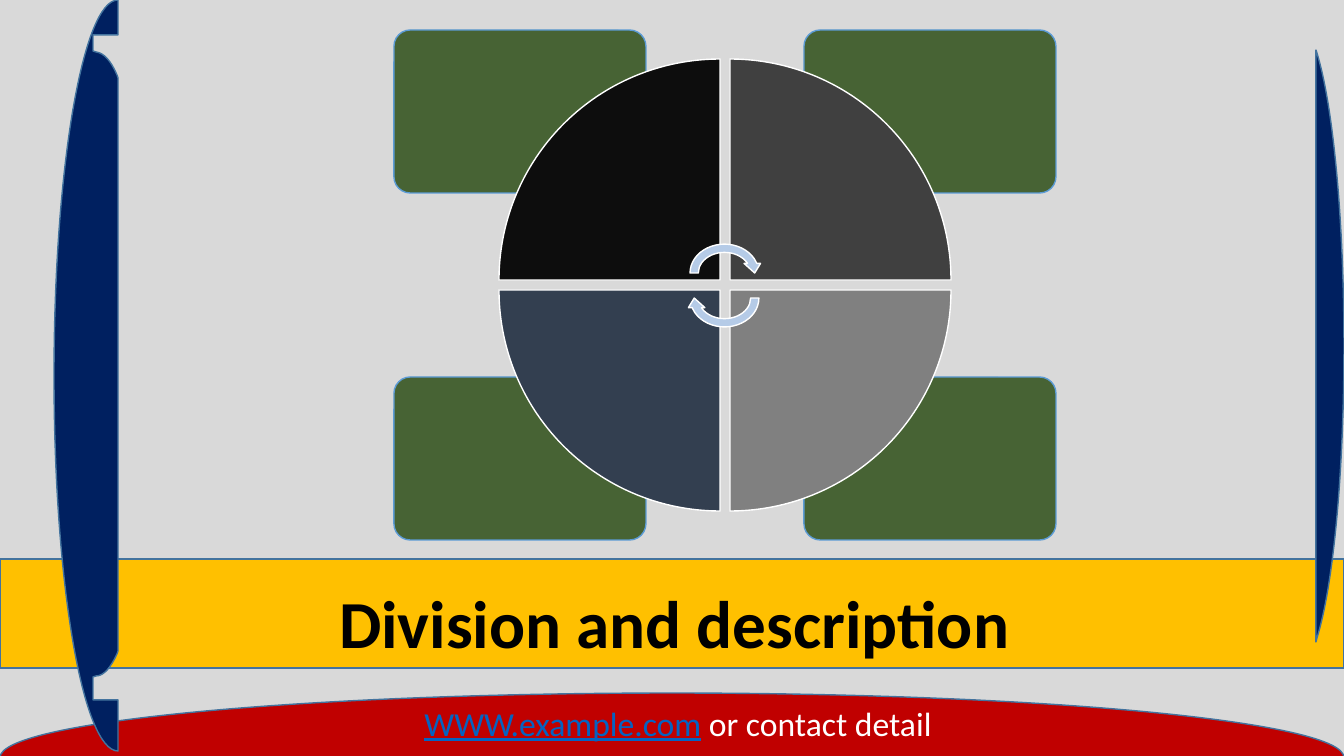
"""Build the division and description slide with a four-part cycle."""
from lxml.etree import SubElement
from pptx import Presentation
from pptx.dml.color import RGBColor
from pptx.enum.shapes import MSO_SHAPE as Preset
from pptx.enum.text import MSO_AUTO_SIZE as AutoSize, PP_ALIGN as Align
from pptx.oxml.ns import qn
from pptx.util import Pt

PX = 12192000 / 1344
GREY = RGBColor(0xD9, 0xD9, 0xD9)
GOLD = RGBColor(0xFF, 0xC0, 0x00)
RED = RGBColor(0xC0, 0x00, 0x00)
NAVY = RGBColor(0x00, 0x20, 0x60)
EDGE = RGBColor(0x43, 0x73, 0x9E)
GREEN = RGBColor(0x38, 0x57, 0x23)
SKY = RGBColor(0x5B, 0x9B, 0xD5)
WHITE = RGBColor(0xFF, 0xFF, 0xFF)
BLACK = RGBColor(0x00, 0x00, 0x00)
LINK = RGBColor(0x05, 0x63, 0xC1)
ARROW = RGBColor(0xB5, 0xCB, 0xE7)
NEAR_BLACK = RGBColor(0x0D, 0x0D, 0x0D)
CHARCOAL = RGBColor(0x40, 0x40, 0x40)
MID_GREY = RGBColor(0x80, 0x80, 0x80)
SLATE = RGBColor(0x33, 0x3F, 0x50)


def paint(shape, fill, line):
    """Give a shape a solid fill and a thin outline without a shadow."""
    shape.shadow.inherit = False
    shape.fill.solid()
    shape.fill.fore_color.rgb = fill
    shape.line.color.rgb = line
    shape.line.width = Pt(1)


def add_outline(shapes, start, segments):
    """Add a closed outline from one-point lines and three-point curves."""
    builder = shapes.build_freeform(*start, scale=PX)
    builder.add_line_segments([p for segment in segments for p in segment], close=True)
    shape = builder.convert_to_shape()
    lines = iter(shape._element.findall(".//" + qn("a:lnTo")))
    for segment in segments:
        nodes = [next(lines) for _ in segment]
        if len(segment) == 3:
            parent = nodes[0].getparent()
            curve = SubElement(parent, qn("a:cubicBezTo"))
            nodes[0].addprevious(curve)
            for node in nodes:
                curve.append(node[0])
                parent.remove(node)
    return shape


presentation = Presentation()
presentation.slide_width = round(1344 * PX)
presentation.slide_height = round(756 * PX)
slide = presentation.slides.add_slide(presentation.slide_layouts[6])
slide.background.fill.solid()
slide.background.fill.fore_color.rgb = GREY

band = slide.shapes.add_shape(
    Preset.RECTANGLE, *[round(v * PX) for v in (0, 559, 1344, 109)])
paint(band, GOLD, EDGE)

dome = [
    [(1031, 693), (1325, 720), (1343, 754)],
    [(1344, 757)], [(0, 757)], [(1, 754)],
    [(19, 720), (312, 693), (672, 693)],
]
left_blade = [
    [(118, 35)], [(93, 35)], [(93, 51)], [(96, 52)],
    [(104, 53), (111, 61), (117, 75)],
    [(118, 78)], [(118, 651)], [(117, 654)],
    [(111, 667), (104, 676), (96, 676)],
    [(93, 677)], [(93, 700)], [(118, 700)], [(118, 751)],
    [(83, 751), (54, 584), (54, 376)],
    [(54, 168), (83, 0), (118, 0)],
]
right_blade = [
    [(1344, 217), (1333, 105), (1317, 53)],
    [(1316, 50)], [(1316, 642)], [(1317, 638)],
    [(1333, 587), (1344, 476), (1344, 346)],
]
outlines = [((672, 693), dome, RED), ((118, 0), left_blade, NAVY),
            ((1344, 346), right_blade, NAVY)]
for start, segments, color in outlines:
    paint(add_outline(slide.shapes, start, segments), color, EDGE)

diagram = slide.shapes.add_group_shape()
for top in (377, 30):
    for left in (804, 394):
        card = diagram.shapes.add_shape(
            Preset.ROUNDED_RECTANGLE, *[round(v * PX) for v in (left, top, 252, 163)])
        card.adjustments[0] = 0.1
        paint(card, GREEN, SKY)
        color_node = card.fill._xPr.find(qn("a:solidFill")).find(qn("a:srgbClr"))
        SubElement(color_node, qn("a:alpha"), val="90000")

wedges = [(499, 59, NEAR_BLACK), (730, 59, CHARCOAL),
          (730, 290, MID_GREY), (499, 290, SLATE)]
for turn, (left, top, color) in enumerate(wedges):
    wedge = diagram.shapes.add_shape(
        Preset.PIE_WEDGE, *[round(v * PX) for v in (left, top, 221, 221)])
    wedge.rotation = turn * 90
    paint(wedge, color, WHITE)

for top, angle in ((240, 0), (265, 180)):
    arrow = diagram.shapes.add_shape(
        Preset.CIRCULAR_ARROW, *[round(v * PX) for v in (686, top, 77, 66)])
    arrow.rotation = angle
    paint(arrow, ARROW, WHITE)

texts = [
    ((326, 576, 697, 92), False, 48, True,
     [("Division and description", BLACK, False)]),
    ((412, 698, 532, 50), True, 24, False,
     [("WWW.example.com", LINK, True), (" or contact detail", WHITE, False)]),
]
for box, wrap, size, bold, runs in texts:
    text_box = slide.shapes.add_textbox(*[round(v * PX) for v in box])
    frame = text_box.text_frame
    frame.word_wrap = wrap
    frame.auto_size = AutoSize.SHAPE_TO_FIT_TEXT
    paragraph = frame.paragraphs[0]
    paragraph.alignment = Align.CENTER
    paragraph.font.name = "Calibri"
    paragraph.font.size = Pt(size)
    paragraph.font.bold = bold
    for text, color, underline in runs:
        run = paragraph.add_run()
        run.text = text
        run.font.color.rgb = color
        run.font.underline = underline

presentation.save("out.pptx")
